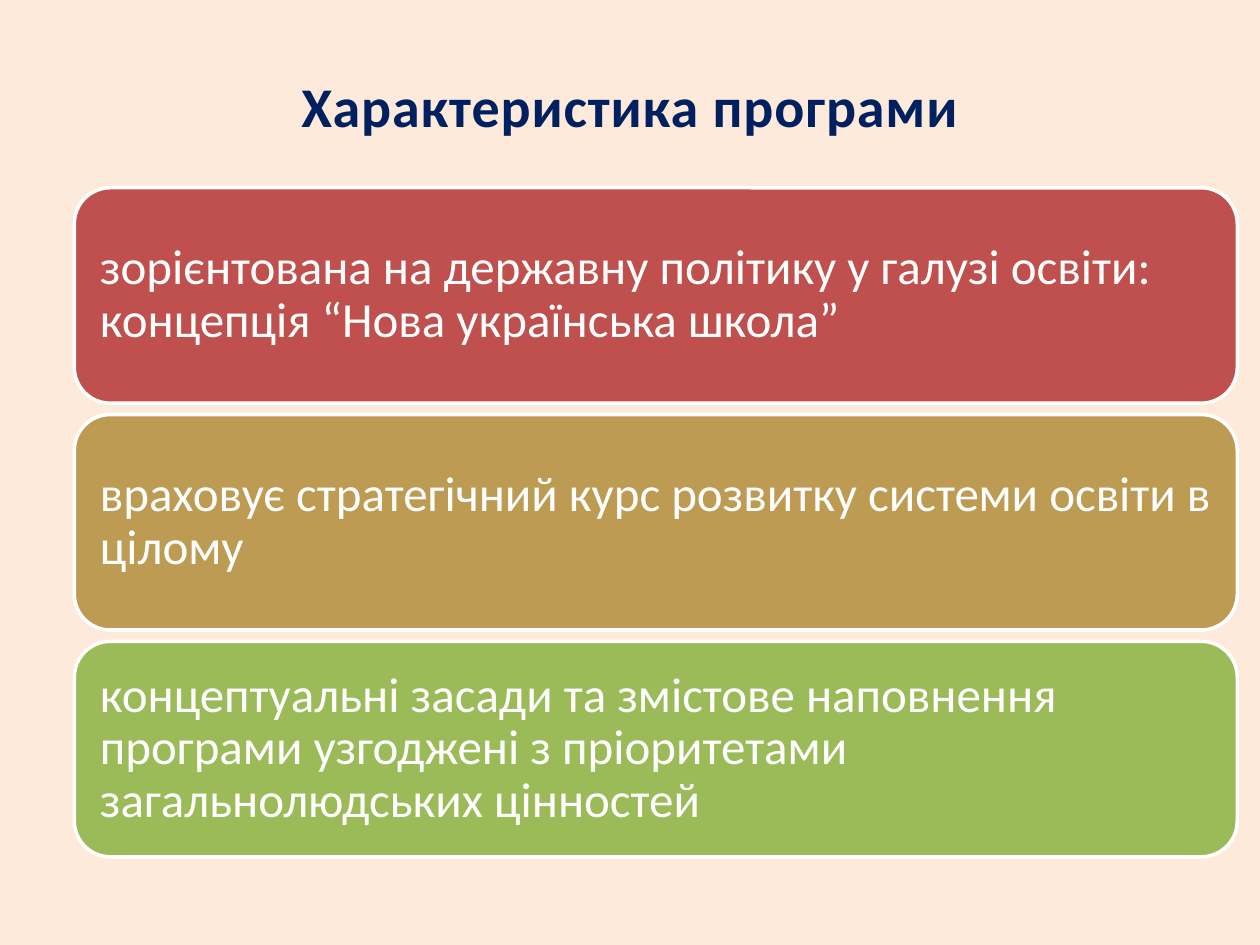
from pptx import Presentation
from pptx.dml.color import RGBColor
from pptx.enum.shapes import MSO_SHAPE
from pptx.enum.text import MSO_ANCHOR, PP_ALIGN
from pptx.util import Inches, Pt

COLORS = {
    "background": "FDEADA",
    "title": "002060",
    "white": "FFFFFF",
    "red": "C0504D",
    "gold": "BD9B53",
    "green": "9BBB59",
}

# Card column: one row of the grid per statement
CARD_LEFT, CARD_TOP = 0.59, 1.49
CARD_WIDTH, CARD_HEIGHT = 9.23, 1.71
ROW_STEP = 1.8

STATEMENTS = [
    ("red", "зорієнтована на державну політику у галузі освіти: "
            "концепція “Нова українська школа”"),
    ("gold", "враховує стратегічний курс розвитку системи освіти в цілому"),
    ("green", "концептуальні засади та змістове наповнення програми "
              "узгоджені з пріоритетами загальнолюдських цінностей"),
]


def color(name):
    return RGBColor.from_string(COLORS[name])


def write_text(frame, text, size, color_name, bold=False,
               align=PP_ALIGN.LEFT, line_spacing=1.0, inset=None, tracking=None):
    """Fill a text frame with one formatted paragraph."""
    frame.word_wrap = True
    frame.vertical_anchor = MSO_ANCHOR.MIDDLE
    if inset is not None:
        frame.margin_left = frame.margin_right = Inches(inset)
        frame.margin_top = frame.margin_bottom = Inches(inset)
    paragraph = frame.paragraphs[0]
    paragraph.alignment = align
    paragraph.line_spacing = line_spacing
    run = paragraph.add_run()
    run.text = text
    run.font.name = "Calibri"
    run.font.size = Pt(size)
    run.font.bold = bold
    run.font.color.rgb = color(color_name)
    if tracking is not None:
        run._r.get_or_add_rPr().set("spc", str(int(tracking * 100)))


class SlideBuilder:
    """Holds the current slide and draws its elements in one style."""

    def __init__(self, presentation):
        title_only = presentation.slide_layouts[5]
        self.slide = presentation.slides.add_slide(title_only)
        fill = self.slide.background.fill
        fill.solid()
        fill.fore_color.rgb = color("background")

    def title(self, text):
        shape = self.slide.shapes.title
        shape.left, shape.top = Inches(0.69), Inches(0.11)
        shape.width, shape.height = Inches(8.62), Inches(1.45)
        write_text(shape.text_frame, text, 32, "title", bold=True,
                   align=PP_ALIGN.CENTER, tracking=0.5)

    def card(self, row, fill_name, text):
        shape = self.slide.shapes.add_shape(
            MSO_SHAPE.ROUNDED_RECTANGLE,
            Inches(CARD_LEFT), Inches(CARD_TOP + row * ROW_STEP),
            Inches(CARD_WIDTH), Inches(CARD_HEIGHT))
        shape.shadow.inherit = False
        shape.fill.solid()
        shape.fill.fore_color.rgb = color(fill_name)
        shape.line.color.rgb = color("white")
        shape.line.width = Pt(2)
        write_text(shape.text_frame, text, 28, "white",
                   line_spacing=0.9, inset=0.12)


def main():
    presentation = Presentation()
    presentation.slide_width = Inches(10)
    presentation.slide_height = Inches(7.5)

    builder = SlideBuilder(presentation)
    builder.title("Характеристика програми")

    # Stacked statements
    for row, (fill_name, text) in enumerate(STATEMENTS):
        builder.card(row, fill_name, text)

    presentation.save("out.pptx")


if __name__ == "__main__":
    main()
